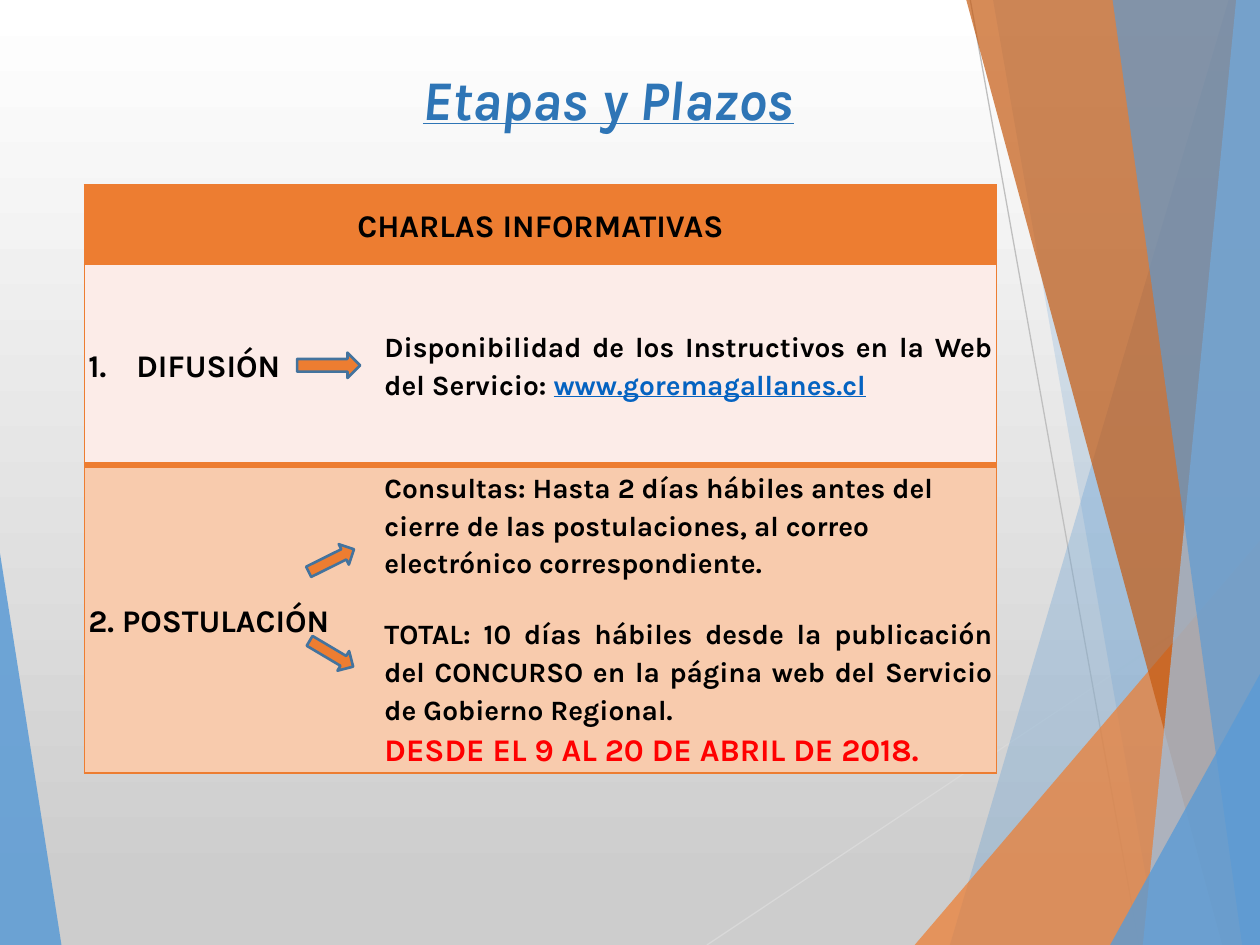
from dataclasses import dataclass
from lxml.etree import SubElement
from pptx import Presentation
from pptx.dml.color import RGBColor
from pptx.enum.shapes import MSO_CONNECTOR, MSO_SHAPE
from pptx.enum.text import MSO_ANCHOR, PP_ALIGN
from pptx.oxml.ns import qn
from pptx.util import Cm, Pt

WIDE, HIGH = 25.4, 19.05
FONT = "Karla"
BLUE, ORANGE, BLACK = "5B9BD5", "ED7D31", "000000"
LEFT, MID, JUST = PP_ALIGN.LEFT, PP_ALIGN.CENTER, PP_ALIGN.JUSTIFY


@dataclass
class Band:
    """Panel between a slanted side and one edge of the slide."""
    top: float
    y: float
    foot: float
    color: str
    alpha: int
    edge: float = WIDE


@dataclass
class Ray:
    start: tuple
    end: tuple
    color: str


@dataclass
class Arrow:
    x: float
    y: float
    w: float
    h: float
    turn: float = 0


@dataclass
class Run:
    text: str
    size: int = 16
    color: str = BLACK
    line: bool = False
    slant: bool = False


@dataclass
class Para:
    runs: list
    align: PP_ALIGN = LEFT
    gap: float = 0
    space: float = 1.15
    count: bool = False


@dataclass
class Cell:
    row: int
    col: int
    fill: str
    paras: list
    sides: dict


def rgb(code: str) -> RGBColor:
    return RGBColor.from_string(code)


def draw_band(slide, band: Band) -> None:
    spots = [(band.top, band.y), (band.foot, HIGH), (band.edge, HIGH)]
    if band.top != band.edge:
        spots.append((band.edge, band.y))
    spots = [(Cm(x), Cm(y)) for x, y in spots]
    pen = slide.shapes.build_freeform(*spots[0])
    pen.add_line_segments(spots[1:], close=True)
    shape = pen.convert_to_shape()
    shape.shadow.inherit = False
    shape.fill.solid()
    shape.fill.fore_color.rgb = rgb(band.color)
    shape.line.fill.background()
    tone = shape._element.xpath("./p:spPr/a:solidFill/a:srgbClr")[0]
    SubElement(tone, qn("a:alpha")).set("val", str(band.alpha * 1000))


def draw_ray(slide, ray: Ray) -> None:
    ends = [Cm(n) for n in ray.start + ray.end]
    line = slide.shapes.add_connector(MSO_CONNECTOR.STRAIGHT, *ends)
    line.line.color.rgb = rgb(ray.color)
    line.line.width = Pt(0.75)
    SubElement(line._element.spPr, qn("a:effectLst"))


def draw_arrow(slide, arrow: Arrow) -> None:
    box = [Cm(n) for n in (arrow.x, arrow.y, arrow.w, arrow.h)]
    shape = slide.shapes.add_shape(MSO_SHAPE.RIGHT_ARROW, *box)
    shape.rotation = arrow.turn
    shape.shadow.inherit = False
    shape.fill.solid()
    shape.fill.fore_color.rgb = rgb(ORANGE)
    shape.line.color.rgb = rgb("43739E")
    shape.line.width = Pt(1.5)


def write(frame, paras: list[Para]) -> None:
    frame.word_wrap = True
    for i, item in enumerate(paras):
        para = frame.add_paragraph() if i else frame.paragraphs[0]
        para.alignment = item.align
        para.line_spacing = item.space
        if item.gap:
            para.space_before = Pt(item.gap)
        if item.count:
            props = para._p.get_or_add_pPr()
            props.set("marL", str(Cm(0.97)))
            props.set("indent", str(-Cm(0.97)))
            SubElement(props, qn("a:buAutoNum")).set("type", "arabicPeriod")
        for part in item.runs:
            run = para.add_run()
            run.text = part.text
            font = run.font
            font.name, font.size, font.bold = FONT, Pt(part.size), True
            font.italic, font.underline = part.slant, part.line
            font.color.rgb = rgb(part.color)


def draw_cell(grid, item: Cell) -> None:
    cell = grid.cell(item.row, item.col)
    cell.vertical_anchor = MSO_ANCHOR.MIDDLE
    cell.margin_left = cell.margin_right = Cm(0.08)
    cell.margin_top = cell.margin_bottom = 0
    write(cell.text_frame, item.paras)
    # Borders come before the fill in the cell's XML
    props = cell._tc.get_or_add_tcPr()
    for side in "LRTB":
        width = item.sides.get(side, 0)
        line = SubElement(props, qn(f"a:ln{side}"), w=str(Pt(width)))
        if width:
            fill = SubElement(line, qn("a:solidFill"))
            SubElement(fill, qn("a:srgbClr"), val=ORANGE)
        else:
            SubElement(line, qn("a:noFill"))
    cell.fill.solid()
    cell.fill.fore_color.rgb = rgb(item.fill)


BACK = [
    Band(0, 11.15, 1.24, BLUE, 85, edge=0),
    Ray((14.25, HIGH), (WIDE, 11.61), "D9D9D9"),
    Ray((19.56, 0), (22.96, HIGH), "BFBFBF"),
    Band(24.77, 0, 19.15, BLUE, 30),
    Band(20.02, 0, 23.34, BLUE, 20),
    Band(WIDE, 10.9, 18.44, ORANGE, 72),
    Band(19.48, 0, 24.64, "C55A11", 70),
    Band(24.92, 0, 23.04, "9DC3E6", 70),
    Band(22.43, 0, 25.04, BLUE, 65),
    Band(WIDE, 13.59, 22.38, BLUE, 80),
]
PINK, PEACH = "FCECE8", "F8CBAD"
CELLS = [
    Cell(0, 0, ORANGE, [Para([Run("CHARLAS INFORMATIVAS", 18)], MID)],
         dict(L=1, R=1, T=1, B=1)),
    Cell(1, 0, PINK, [Para([Run("DIFUSIÓN", 18)], count=True)],
         dict(L=1, T=1, B=4)),
    Cell(1, 1, PINK, [Para([
        Run("Disponibilidad de los Instructivos en la Web del Servicio: "),
        Run("www.goremagallanes.cl", color="0563C1", line=True)], JUST)],
        dict(R=1, T=1, B=4)),
    Cell(2, 0, PEACH, [Para([Run("2. POSTULACIÓN", 18)])],
         dict(L=1, T=4, B=1)),
    Cell(2, 1, PEACH, [
        Para([Run("Consultas: Hasta 2 días hábiles antes del cierre de las "
                  "postulaciones, al correo electrónico correspondiente.")]),
        Para([Run("TOTAL: 10 días hábiles desde la publicación del CONCURSO "
                  "en la página web del Servicio de Gobierno Regional.")],
             JUST, gap=19),
        Para([Run("DESDE EL 9 AL 20 DE ABRIL DE 2018.", 18, "FF0000")], JUST)],
        dict(R=1, T=4, B=1)),
]
ARROWS = [
    Arrow(6.17, 11.07, 1.02, 0.46, 333.6),
    Arrow(5.99, 7.11, 1.27, 0.51),
    Arrow(6.17, 12.95, 1.02, 0.46, 30.7),
]


def main() -> None:
    deck = Presentation()
    deck.slide_width, deck.slide_height = Cm(WIDE), Cm(HIGH)
    slide = deck.slides.add_slide(deck.slide_layouts[6])

    # Background and side panels
    fill = slide.background.fill
    fill.gradient()
    fill.gradient_angle = 270
    for stop, (spot, tone) in zip(fill.gradient_stops,
                                  [(0, "FFFFFF"), (0.94, "CDCDCD")]):
        stop.position, stop.color.rgb = spot, rgb(tone)
    for item in BACK:
        (draw_band if isinstance(item, Band) else draw_ray)(slide, item)

    # Title
    title = slide.shapes.add_textbox(Cm(2.36), Cm(1.32), Cm(19.81), Cm(1.5))
    write(title.text_frame, [Para(
        [Run("Etapas y Plazos", 32, "2E75B6", True, True)], MID, space=0.9)])

    # Table of stages
    cols, rows = [5.97, 12.42], [1.6, 4.04, 6.18]
    grid = slide.shapes.add_table(3, 2, Cm(1.7), Cm(3.73), Cm(sum(cols)),
                                  Cm(sum(rows))).table
    grid.first_row = grid.horz_banding = False
    for col, width in zip(grid.columns, cols):
        col.width = Cm(width)
    for row, height in zip(grid.rows, rows):
        row.height = Cm(height)
    grid.cell(0, 0).merge(grid.cell(0, 1))
    for item in CELLS:
        draw_cell(grid, item)

    # Arrows from stage to detail
    for item in ARROWS:
        draw_arrow(slide, item)
    deck.save("out.pptx")


if __name__ == "__main__":
    main()
